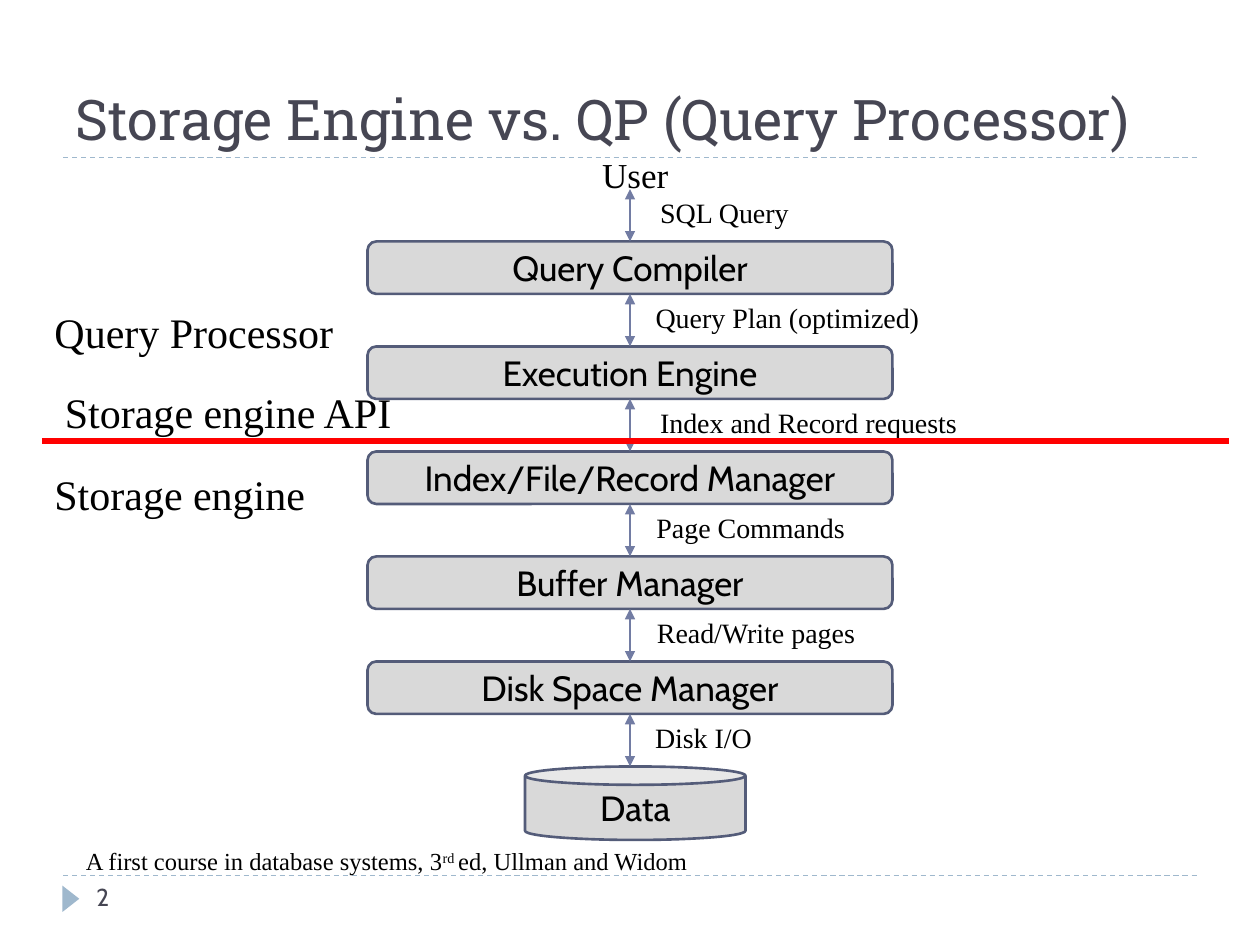
from lxml.etree import SubElement as Sub
from pptx import Presentation
from pptx.dml.color import RGBColor as Rgb
from pptx.enum.dml import MSO_LINE as Dash
from pptx.enum.shapes import MSO_CONNECTOR as Conn, MSO_SHAPE as Kind
from pptx.enum.text import MSO_ANCHOR as Anchor, PP_ALIGN as Align
from pptx.oxml.ns import qn
from pptx.util import Pt

PX = 7620  # 120 px to the inch
THEME = {
    "ink": Rgb(0, 0, 0),
    "fill": Rgb(0xD9, 0xD9, 0xD9),
    "edge": Rgb(0x54, 0x5C, 0x79),
    "arrow": Rgb(0x72, 0x7C, 0xA3),
    "rule": Rgb(0x9F, 0xB8, 0xCD),
    "split": Rgb(0xFF, 0, 0),
    "head": Rgb(0x46, 0x46, 0x53),
}
SERIF, SANS, SLAB = "Times New Roman", "Cabin", "Roboto Slab"
TYPE = {
    "title": {"name": SLAB, "size": Pt(32), "color": THEME["head"]},
    "page": {"name": SANS, "size": Pt(14), "color": THEME["head"]},
    "box": {"name": SANS, "size": Pt(20), "color": THEME["ink"]},
    "user": {"name": SERIF, "size": Pt(20), "color": THEME["ink"]},
    "label": {"name": SERIF, "size": Pt(16), "color": THEME["ink"]},
    "side": {"name": SERIF, "size": Pt(24), "color": THEME["ink"]},
    "cite": {"name": SERIF, "size": Pt(14), "color": THEME["ink"]},
}

prs = Presentation()
prs.slide_width, prs.slide_height = 1200 * PX, 900 * PX
slide = prs.slides.add_slide(prs.slide_layouts[6])
shapes = slide.shapes


def put(text, role, at, kind=None, align=Align.LEFT, gap=0, anchor=Anchor.TOP):
    """Add a text box, or a filled shape if kind is given; "^" parts the runs."""
    area = [n * PX for n in at]
    if kind is None:
        item = shapes.add_textbox(*area)
    else:
        item = shapes.add_shape(kind, *area)
        item.shadow.inherit = False
        item.fill.solid()
        item.fill.fore_color.rgb = THEME["fill"]
        item.line.color.rgb = THEME["edge"]
        item.line.width = Pt(1.5)
    frame = item.text_frame
    frame.word_wrap = True
    frame.vertical_anchor = anchor
    para = frame.paragraphs[0]
    para.alignment = align
    para.space_before = Pt(gap)
    for part in text.split("^"):
        run = para.add_run()
        run.text = part
        for key, val in TYPE[role].items():
            if key == "color":
                run.font.color.rgb = val
            else:
                setattr(run.font, key, val)
    return item


def draw(x1, y1, x2, y2, color, width):
    """Add a straight line without shadow."""
    line = shapes.add_connector(Conn.STRAIGHT, x1 * PX, y1 * PX, x2 * PX, y2 * PX)
    line.line.color.rgb = THEME[color]
    line.line.width = Pt(width)
    Sub(line._element.spPr, qn("a:effectLst"))
    return line


# Frame of the page
for y in (150, 834):
    draw(60, y, 1140, y, "rule", 0.75).line.dash_style = Dash.DASH
mark = shapes.add_shape(Kind.ISOSCELES_TRIANGLE, 55 * PX, 848 * PX, 25 * PX, 16 * PX)
mark.rotation = 90
mark.shadow.inherit = False
mark.fill.solid()
mark.fill.fore_color.rgb = THEME["rule"]
mark.line.fill.background()
put("Storage Engine vs. QP (Query Processor)", "title", (60, 20, 1080, 130),
    anchor=Anchor.BOTTOM)
put("2", "page", (80, 834, 260, 48))

# Layers of the system
TOP, STEP, HIGH = 230, 100, 50
layers = ["Query Compiler", "Execution Engine", "Index/File/Record Manager",
          "Buffer Manager", "Disk Space Manager"]
boxes = [put(name, "box", (350, TOP + i * STEP, 500, HIGH),
             Kind.ROUNDED_RECTANGLE, Align.CENTER, anchor=Anchor.MIDDLE)
         for i, name in enumerate(layers)]
put("Data", "box", (500, 730, 210, 70), Kind.CAN, Align.CENTER, anchor=Anchor.MIDDLE)
put("User", "user", (70, 140, 1070, 40), align=Align.CENTER, gap=6)

# What passes between the layers: text, left, width
flows = [
    ("SQL Query", 600, 180),
    ("Query Plan (optimized)", 600, 300),
    ("Index and Record requests", 580, 380),
    ("Page Commands", 600, 230),
    ("Read/Write pages", 550, 340),
    ("Disk I/O", 560, 220),
]
for i, (text, x, wide) in enumerate(flows):
    y = TOP - HIGH + i * STEP
    arrow = draw(600, y, 600, y + HIGH, "arrow", 0.75)
    if i > 0:
        arrow.begin_connect(boxes[i - 1], 2)
    if i < len(boxes):
        arrow.end_connect(boxes[i], 0)
    stroke = arrow.line._get_or_add_ln()
    for end in ("a:headEnd", "a:tailEnd"):
        Sub(stroke, qn(end), type="triangle")
    put(text, "label", (x, y, wide, 40), align=Align.CENTER, gap=6)

# Split between query processor and storage engine
draw(40, 420, 1170, 420, "split", 3.75)
for text, x, y in (("Query Processor", 40, 286), ("Storage engine API", 50, 362),
                   ("Storage engine", 40, 440)):
    put(text, "side", (x, y, 340, 60))

cite = put("A first course in database systems, 3^rd ^ed, Ullman and Widom", "cite",
           (70, 800, 1070, 40), gap=6)
cite.text_frame.paragraphs[0].runs[1].font._element.set("baseline", "30000")

prs.save("out.pptx")
